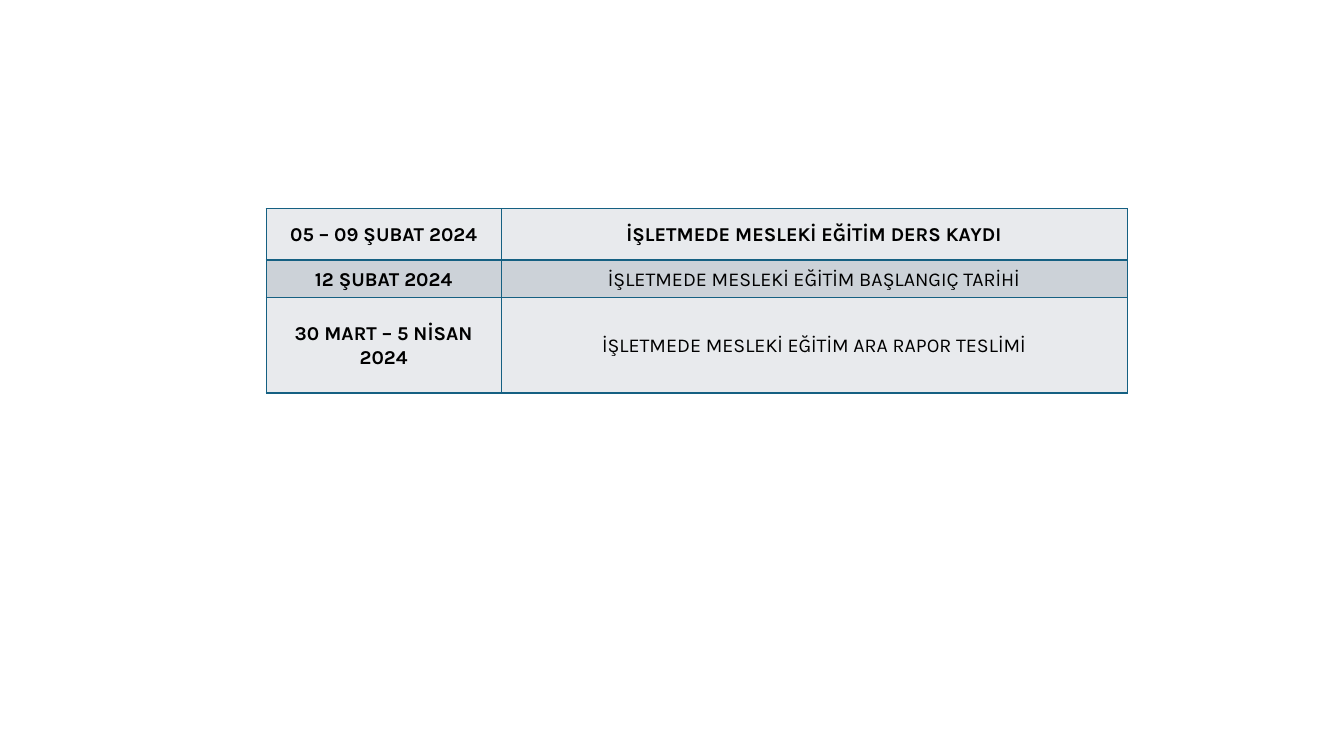
from lxml.etree import SubElement as Sub
from pptx import Presentation as Deck
from pptx.dml.color import RGBColor as Rgb
from pptx.enum.text import MSO_ANCHOR as Anchor, PP_ALIGN as Align
from pptx.oxml.ns import qn
from pptx.util import Inches, Pt

HUES = {"edge": "156082", "pale": "E8EAED", "dark": "CCD2D8", "text": "000000"}
COLS = [2.33, 6.21]
ROWS = [0.51, 0.37, 0.95]
DATES = [
    ("05 – 09 ŞUBAT 2024", "İŞLETMEDE MESLEKİ EĞİTİM DERS KAYDI"),
    ("12 ŞUBAT 2024", "İŞLETMEDE MESLEKİ EĞİTİM BAŞLANGIÇ TARİHİ"),
    ("30 MART – 5 NİSAN 2024", "İŞLETMEDE MESLEKİ EĞİTİM ARA RAPOR TESLİMİ"),
]


def edge(cell):
    props = cell._tc.get_or_add_tcPr()
    for side in "LRTB":
        line = Sub(props, qn(f"a:ln{side}"), w=str(Pt(1)))
        fill = Sub(line, qn("a:solidFill"))
        Sub(fill, qn("a:srgbClr"), val=HUES["edge"])


def write(cell, text, bold):
    cell.margin_left = cell.margin_right = Inches(0.04)
    cell.margin_top = cell.margin_bottom = 0
    cell.vertical_anchor = Anchor.MIDDLE
    cell.text_frame.text = text
    para = cell.text_frame.paragraphs[0]
    para.alignment = Align.CENTER
    para.line_spacing = 1.07
    para.space_after = Pt(8)
    font = para.runs[0].font
    font.name, font.size, font.bold = "Karla", Pt(14), bold
    font.color.rgb = Rgb.from_string(HUES["text"])


def paint(cell, hue):
    cell.fill.solid()
    cell.fill.fore_color.rgb = Rgb.from_string(HUES[hue])


def plan(slide, left, top):
    size = Inches(sum(COLS)), Inches(sum(ROWS))
    table = slide.shapes.add_table(len(ROWS), len(COLS), left, top, *size).table
    table.first_row = table.horz_banding = False
    for col, width in zip(table.columns, COLS):
        col.width = Inches(width)
    for r, (row, high) in enumerate(zip(table.rows, ROWS)):
        row.height = Inches(high)
        for c, cell in enumerate(row.cells):
            edge(cell)
            paint(cell, "dark" if r % 2 else "pale")
            write(cell, DATES[r][c], r == 0 or c == 0)


def main():
    deck = Deck()
    deck.slide_width, deck.slide_height = Inches(13.33), Inches(7.5)
    slide = deck.slides.add_slide(deck.slide_layouts[6])
    plan(slide, Inches(2.64), Inches(2.07))
    deck.save("out.pptx")


if __name__ == "__main__":
    main()
